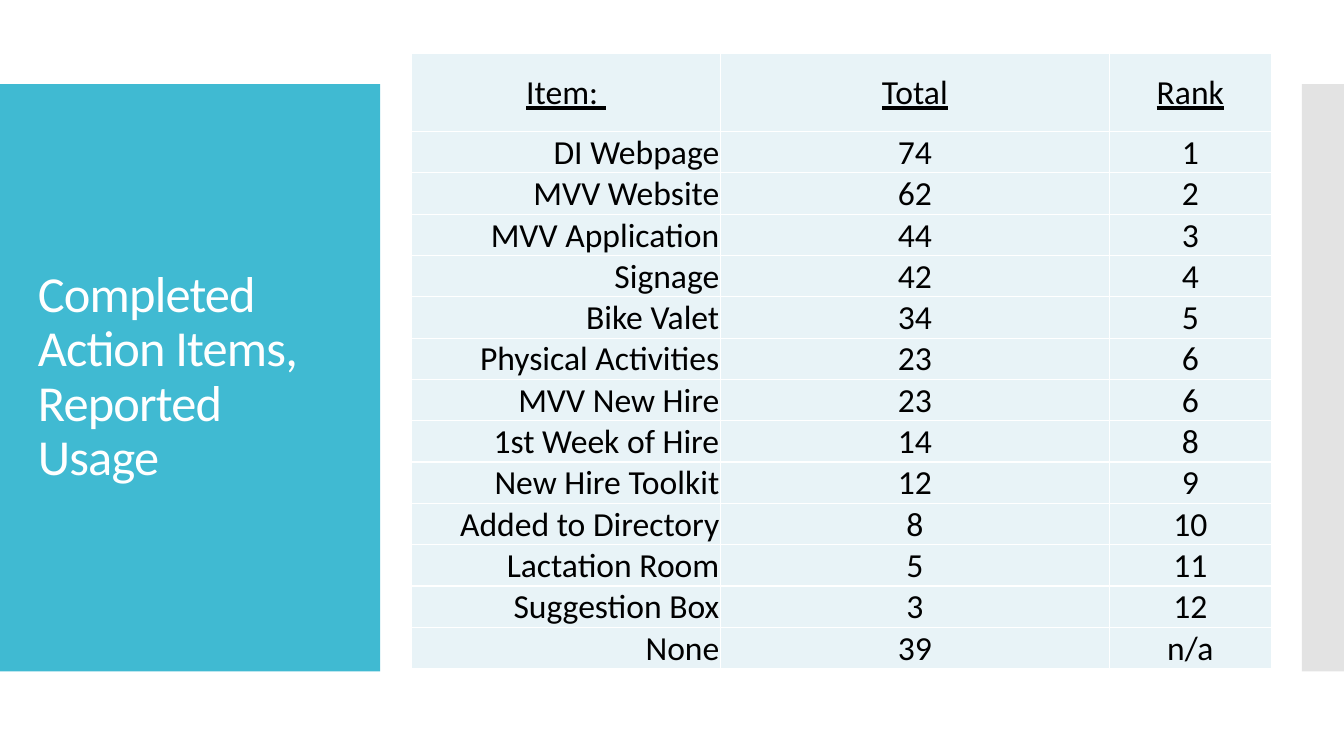
from lxml.etree import SubElement
from pptx import Presentation
from pptx.dml.color import RGBColor
from pptx.enum.shapes import MSO_SHAPE
from pptx.enum.text import MSO_ANCHOR, PP_ALIGN
from pptx.oxml.ns import qn
from pptx.util import Pt

FONT = "Calibri"
HEADER = ("Item: ", "Total", "Rank")
ITEMS = [
    ("DI Webpage", "74", "1"),
    ("MVV Website", "62", "2"),
    ("MVV Application", "44", "3"),
    ("Signage", "42", "4"),
    ("Bike Valet", "34", "5"),
    ("Physical Activities", "23", "6"),
    ("MVV New Hire", "23", "6"),
    ("1st Week of Hire", "14", "8"),
    ("New Hire Toolkit", "12", "9"),
    ("Added to Directory", "8", "10"),
    ("Lactation Room", "5", "11"),
    ("Suggestion Box", "3", "12"),
    ("None", "39", "n/a"),
]


def paint(fill, color, alpha=None):
    """Fill with a solid hex colour, at an optional opacity in percent."""
    fill.solid()
    fill.fore_color.rgb = RGBColor.from_string(color)
    if alpha is not None:
        srgb = fill._xPr.find(".//" + qn("a:srgbClr"))
        SubElement(srgb, qn("a:alpha"), val=str(alpha * 1000))


def set_font(font, size, color):
    """Set the slide's typeface with a size and a hex colour."""
    font.name, font.size = FONT, Pt(size)
    paint(font.fill, color)


def add_panel(slide, x, y, w, h, color, alpha=None):
    """Add a plain rectangle without an outline."""
    sp = slide.shapes.add_shape(MSO_SHAPE.RECTANGLE, Pt(x), Pt(y), Pt(w), Pt(h))
    sp.shadow.inherit = False
    paint(sp.fill, color, alpha)
    sp.line.fill.background()


def add_title_panel(slide, x, y, w, h, text):
    """Add the coloured panel with the slide title inside it."""
    add_panel(slide, x, y, w, h, "40BAD2")
    box = slide.shapes.add_textbox(Pt(x + 20), Pt(y + 29), Pt(w - 39.5), Pt(h - 58))
    tf = box.text_frame
    tf.word_wrap = True
    tf.vertical_anchor = MSO_ANCHOR.MIDDLE
    p = tf.paragraphs[0]
    p.line_spacing = 0.9
    set_font(p.font, 36, "FFFFFF")
    r = p.add_run()
    r.text = text
    r._r.get_or_add_rPr().set("spc", "-60")


def add_borders(cell, color, width):
    """Draw a solid border on all four sides of a cell."""
    tcPr = cell._tc.get_or_add_tcPr()
    for side in ("lnL", "lnR", "lnT", "lnB"):
        ln = SubElement(tcPr, qn(f"a:{side}"), w=str(Pt(width)))
        fill = SubElement(ln, qn("a:solidFill"))
        SubElement(fill, qn("a:srgbClr"), val=color)


def fill_cell(cell, text, align, underline):
    """Style one cell and write its text."""
    add_borders(cell, "FFFFFF", 1)
    paint(cell.fill, "E8F3F7")
    cell.margin_left = cell.margin_right = cell.margin_top = Pt(0.7)
    cell.margin_bottom = 0
    cell.vertical_anchor = MSO_ANCHOR.MIDDLE
    p = cell.text_frame.paragraphs[0]
    p.text, p.alignment = text, align
    set_font(p.font, 24, "000000")
    p.font.underline = underline


def add_usage_table(slide, x, y, widths, header_h, row_h):
    """Add the table of items with their totals and ranks."""
    rows = [HEADER, *ITEMS]
    height = header_h + row_h * len(ITEMS)
    frame = slide.shapes.add_table(
        len(rows), len(widths), Pt(x), Pt(y), Pt(sum(widths)), Pt(height))
    table = frame.table
    for column, width in zip(table.columns, widths):
        column.width = Pt(width)
    for i, values in enumerate(rows):
        table.rows[i].height = Pt(row_h if i else header_h)
        for j, text in enumerate(values):
            align = PP_ALIGN.RIGHT if i and j == 0 else PP_ALIGN.CENTER
            fill_cell(table.cell(i, j), text, align, i == 0)


def main():
    """Build and save the slide."""
    prs = Presentation()
    prs.slide_width, prs.slide_height = Pt(960), Pt(540)
    slide = prs.slides.add_slide(prs.slide_layouts[6])
    add_title_panel(slide, 0, 60, 271.5, 419.5, "Completed Action Items, Reported Usage")
    add_panel(slide, 930, 60, 30, 419.5, "C8C8C8", 50)
    add_usage_table(slide, 294, 38.5, (220.5, 278, 115.5), 55.5, 28.2)
    prs.save("out.pptx")


if __name__ == "__main__":
    main()
